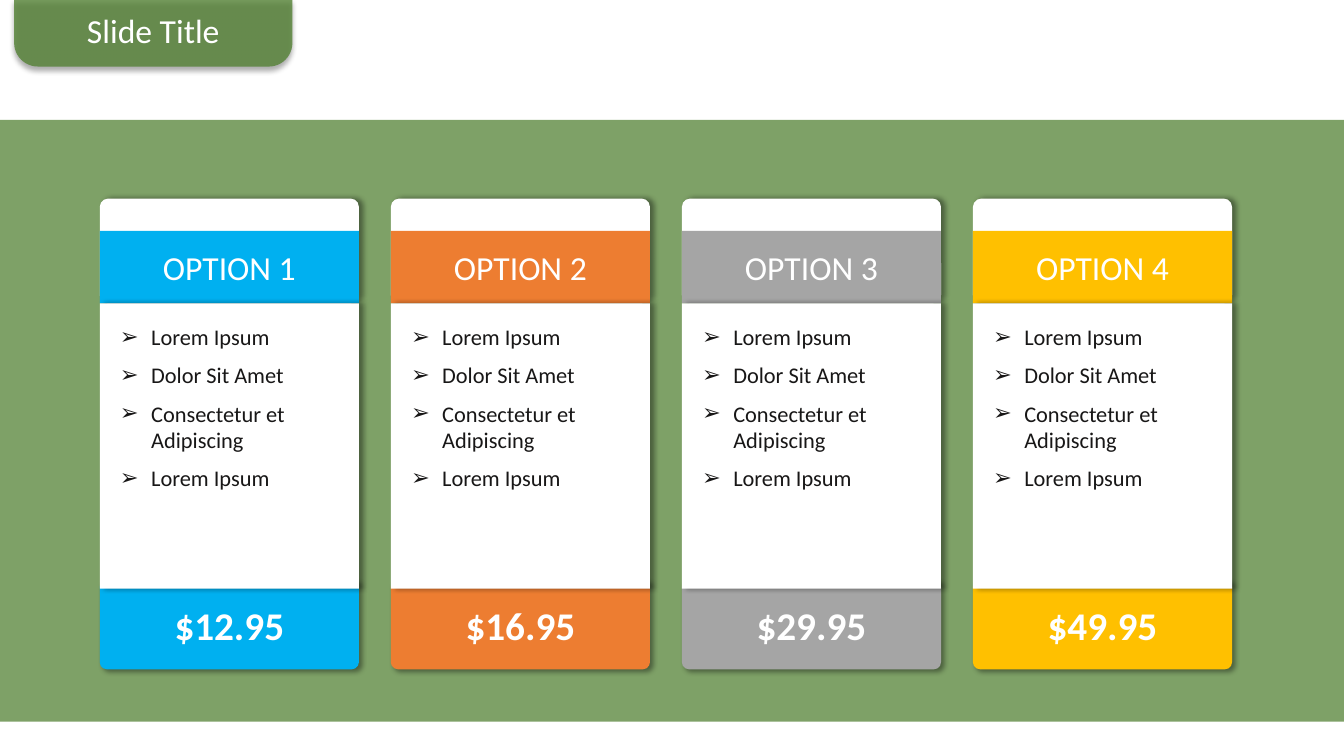
"""Build a pricing slide with four option cards."""
from lxml import etree
from pptx import Presentation
from pptx.dml.color import RGBColor
from pptx.enum.shapes import MSO_SHAPE
from pptx.enum.text import MSO_ANCHOR, MSO_AUTO_SIZE, PP_ALIGN
from pptx.oxml.ns import qn
from pptx.util import Inches, Pt

RECT, ROUND = MSO_SHAPE.RECTANGLE, MSO_SHAPE.ROUNDED_RECTANGLE
TAB = MSO_SHAPE.ROUND_2_SAME_RECTANGLE
TOP, MIDDLE = MSO_ANCHOR.TOP, MSO_ANCHOR.MIDDLE
LEFT, CENTER = PP_ALIGN.LEFT, PP_ALIGN.CENTER
GREEN, WHITE, DARK = "548235", "FFFFFF", "181717"
WIDE, HIGH = 13.33, 7.5
START, CARD, PITCH = 0.99, 2.57, 8.66 / 3


def block(kind, box, color, alpha=100, angle=None, adjust=()):
    shape = slide.shapes.add_shape(kind, *map(Inches, box))
    shape.shadow.inherit = False
    shape.fill.solid()
    shape.fill.fore_color.rgb = RGBColor.from_string(color)
    shape.line.fill.background()
    for i, value in enumerate(adjust):
        shape.adjustments[i] = value
    props = shape.element.spPr
    if alpha < 100:
        tone = props.find(qn("a:solidFill"))[0]
        etree.SubElement(tone, qn("a:alpha"), val=str(alpha * 1000))
    if angle is not None:
        shade = etree.SubElement(
            props.find(qn("a:effectLst")), qn("a:outerShdw"),
            blurRad=str(Pt(4)), dist=str(Pt(3)), dir=str(angle * 60000),
            algn="t", rotWithShape="0")
        tone = etree.SubElement(shade, qn("a:srgbClr"), val="000000")
        etree.SubElement(tone, qn("a:alpha"), val="40000")
    return shape


def write(shape, lines, size, color=WHITE, bold=False, align=CENTER,
          anchor=MIDDLE):
    frame = shape.text_frame
    frame.word_wrap = True
    frame.vertical_anchor = anchor
    frame.text = "\n".join(lines)
    look = {"name": "Calibri", "size": Pt(size), "bold": bold}
    for para in frame.paragraphs:
        para.alignment = align
        font = para.runs[0].font
        for key, value in look.items():
            setattr(font, key, value)
        font.color.rgb = RGBColor.from_string(color)
    return frame


deck = Presentation()
deck.slide_width, deck.slide_height = Inches(WIDE), Inches(HIGH)
slide = deck.slides.add_slide(deck.slide_layouts[5])

block(RECT, (0, 1.19, WIDE, 5.97), GREEN, alpha=75)

offers = [("00B0F0", "$12.95"), ("ED7D31", "$16.95"),
          ("A5A5A5", "$29.95"), ("FFC000", "$49.95")]
perks = ["Lorem Ipsum", "Dolor Sit Amet", "Consectetur et Adipiscing",
         "Lorem Ipsum"]
insets = {"margin_left": 0.2, "margin_top": 0.2,
          "margin_right": 0.1, "margin_bottom": 0.05}

for col, (color, price) in enumerate(offers):
    left = START + col * PITCH
    foot = block(ROUND, (left, 5.75, CARD, 0.89), color, angle=45,
                 adjust=[0.08])
    write(foot, [price], 28, bold=True)
    block(ROUND, (left, 1.97, CARD, 1.04), WHITE, angle=0, adjust=[0.08])
    head = block(RECT, (left, 2.29, CARD, 0.72), color)
    write(head, [f"OPTION {col + 1}"], 24)
    body = block(RECT, (left, 3.01, CARD, 2.83), WHITE, angle=0)
    frame = write(body, perks, 16, DARK, align=LEFT, anchor=TOP)
    for key, value in insets.items():
        setattr(frame, key, Inches(value))
    for row, para in enumerate(frame.paragraphs):
        para.space_before = Pt(8 if row else 0)
        props = para._p.get_or_add_pPr()
        props.set("marL", str(Inches(0.31)))
        props.set("indent", str(-Inches(0.31)))
        etree.SubElement(props, qn("a:buFont"), typeface="Arial")
        etree.SubElement(props, qn("a:buChar"), char="➢")

tab = block(TAB, (0.14, -0.01, 2.76, 0.67), GREEN, alpha=80, angle=90,
            adjust=[0.35, 0])
tab.rotation = 180
title = slide.shapes.title
title.left, title.top, title.width, title.height = map(
    Inches, (0.14, 0.05, 2.76, 0.5))
write(title, ["Slide Title"], 24, anchor=TOP).auto_size = MSO_AUTO_SIZE.NONE
tab.element.addnext(title.element)

deck.save("out.pptx")
